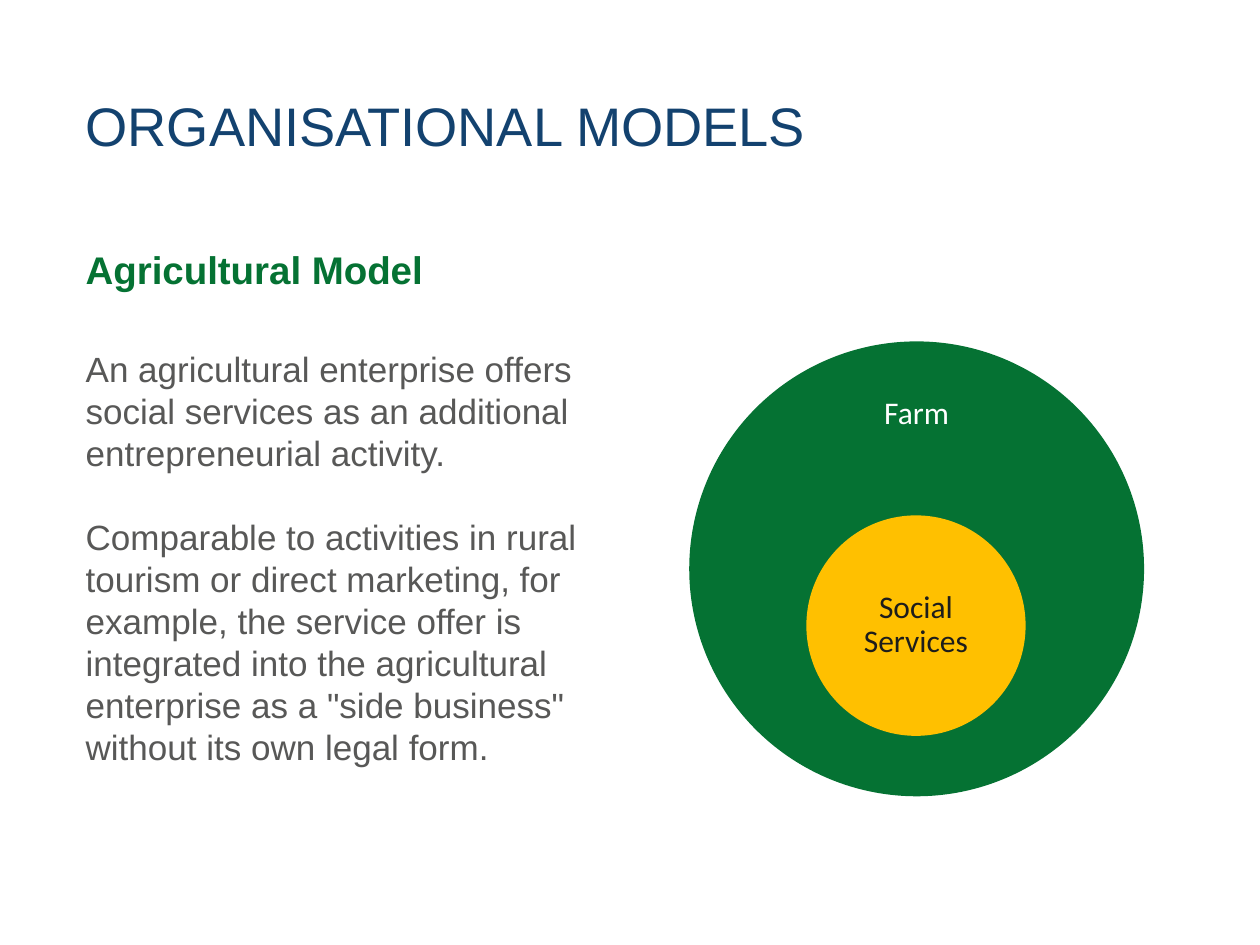
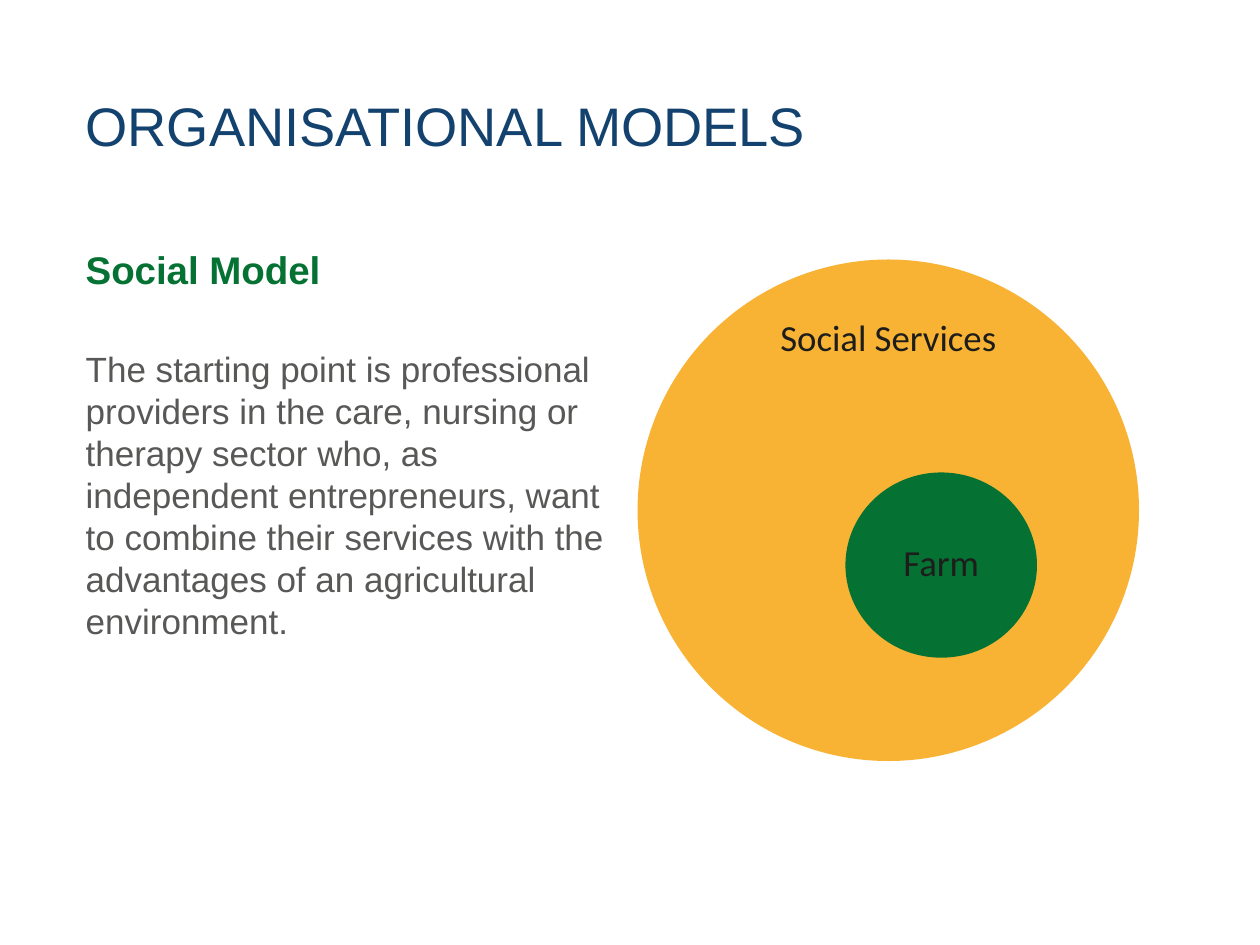
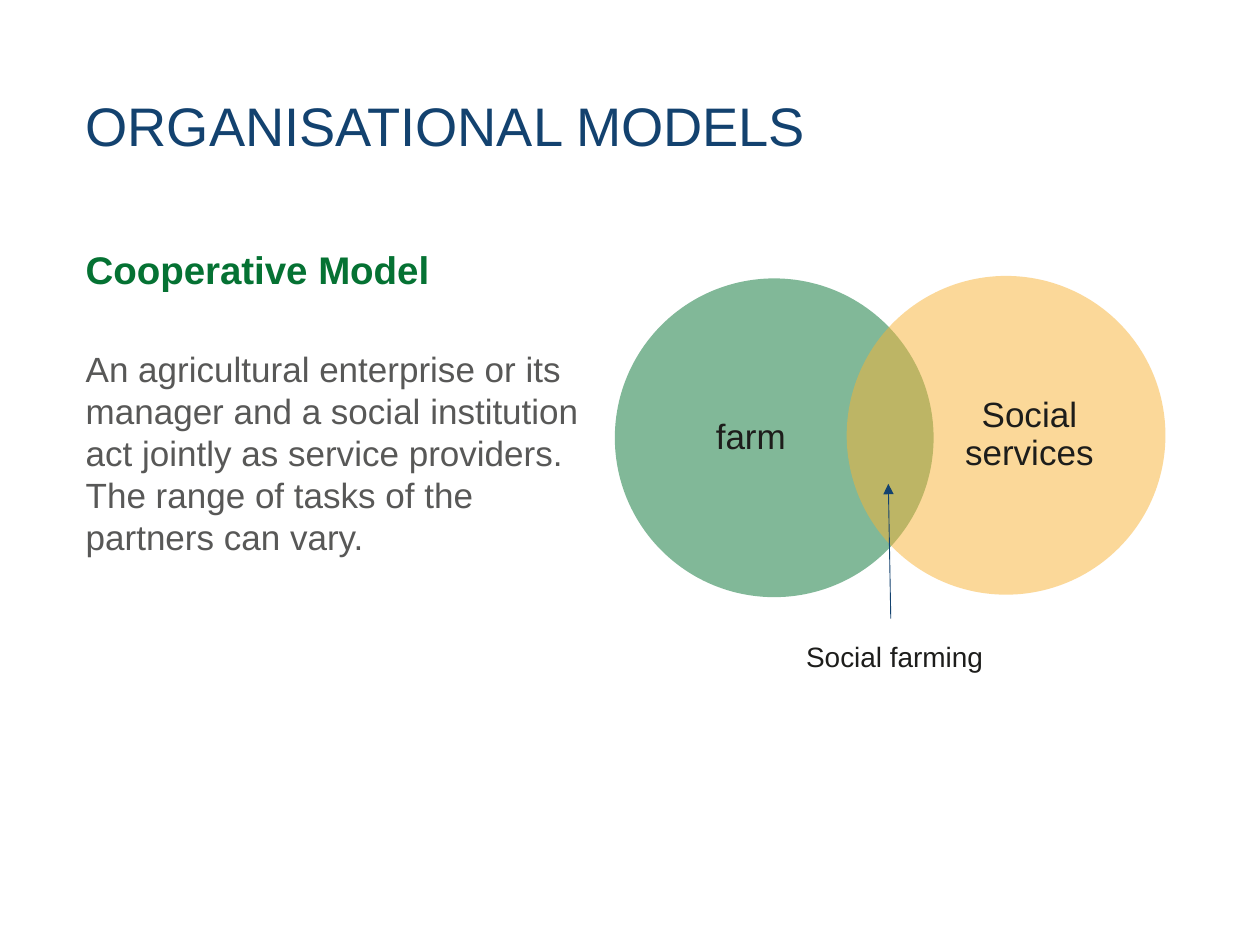
import pptx
import pptx.util
import pptx.dml.color
import pptx.enum.shapes
import pptx.enum.text
import pptx.oxml.ns
import lxml.etree

Inches = pptx.util.Inches
Pt = pptx.util.Pt
ALIGN = pptx.enum.text.PP_ALIGN
ANCHOR = pptx.enum.text.MSO_ANCHOR

COLORS = {
    "title": "13426F",
    "green": "057233",
    "yellow": "FFC000",
    "orange": "F9B334",
    "body": "585857",
    "dark": "1D1D1B",
    "white": "FFFFFF",
}
TITLE = "ORGANISATIONAL MODELS"
TITLE_BOX = (0.68, 0.73, 8.65, 0.71)
TEXT_COLUMN = (0.68, 1.92, 4.25, 4.85)
HEADING_HEIGHT = 0.79
BODY_OFFSET = 0.82


def rgb(name):
    return pptx.dml.color.RGBColor.from_string(COLORS[name])


def add_xml(parent, tag, **attributes):
    return lxml.etree.SubElement(parent, pptx.oxml.ns.qn(tag), attributes)


def format_text(shape, lines, size, color, font="Arial", bold=False, align=ALIGN.LEFT,
                anchor=ANCHOR.TOP, insets=(0.1, 0.05, 0.1, 0.05), spacing=None, gap=0):
    """Write one paragraph per line; insets run left, top, right, bottom."""
    frame = shape.text_frame
    frame.text = "\n".join(lines)
    frame.word_wrap = True
    frame.auto_size = pptx.enum.text.MSO_AUTO_SIZE.NONE
    frame.vertical_anchor = anchor
    (frame.margin_left, frame.margin_top,
     frame.margin_right, frame.margin_bottom) = map(Inches, insets)
    for index, paragraph in enumerate(frame.paragraphs):
        paragraph.alignment = align
        paragraph.line_spacing = spacing
        paragraph.space_before = Pt(gap if index else 0)
        for run in paragraph.runs:
            run.font.name = font
            run.font.size = Pt(size)
            run.font.bold = bold
            run.font.color.rgb = rgb(color)


def add_text(slide, box, lines, size, color, **style):
    shape = slide.shapes.add_textbox(*map(Inches, box))
    format_text(shape, lines, size, color, **style)


def add_circle_label(slide, box, text, size, color, font, inset):
    add_text(slide, box, [text], size, color, font=font, align=ALIGN.CENTER,
             anchor=ANCHOR.MIDDLE, insets=(inset,) * 4, spacing=0.9)


def add_circle(slide, box, color, opacity=None):
    circle = slide.shapes.add_shape(pptx.enum.shapes.MSO_SHAPE.OVAL, *map(Inches, box))
    circle.shadow.inherit = False
    circle.line.fill.background()
    circle.fill.solid()
    circle.fill.fore_color.rgb = rgb(color)
    if opacity is not None:
        fill_color = circle._element.spPr.find(".//" + pptx.oxml.ns.qn("a:srgbClr"))
        add_xml(fill_color, "a:alpha", val=str(opacity * 1000))


def add_arrow(slide, start, end):
    arrow = slide.shapes.add_connector(
        pptx.enum.shapes.MSO_CONNECTOR.STRAIGHT, *map(Inches, start + end))
    arrow.line.color.rgb = rgb("title")
    arrow.line.width = Pt(0.5)
    add_xml(arrow.line._get_or_add_ln(), "a:tailEnd", type="triangle")
    add_xml(arrow._element.spPr, "a:effectLst")


def add_model_slide(presentation, heading, body):
    """Title plus the text column that all models share."""
    slide = presentation.slides.add_slide(presentation.slide_layouts[5])
    title = slide.shapes.title
    title.left, title.top, title.width, title.height = map(Inches, TITLE_BOX)
    format_text(title, [TITLE], 31, "title", insets=(0, 0.05, 0.1, 0.05), spacing=Pt(34))

    left, top, width, height = TEXT_COLUMN
    add_text(slide, (left, top, width, HEADING_HEIGHT), [heading], 22, "green",
             bold=True, insets=(0, 0.05, 0.1, 0.05), spacing=Pt(25))
    add_text(slide, (left, top + BODY_OFFSET, width, height - BODY_OFFSET), body, 20, "body",
             insets=(0, 0.02, 0.1, 0.05), spacing=Pt(24), gap=24)
    return slide


def add_nested_circles(slide, box, outer, inner, inner_box, size, inset):
    """Outer and inner are (text, fill, text colour, label width, label height)."""
    left, top, diameter = box
    text, fill, color, label_width, label_height = outer
    add_circle(slide, (left, top, diameter, diameter), fill)
    add_circle_label(slide, (left + (diameter - label_width) / 2, top + 0.075 * diameter,
                             label_width, label_height), text, size, color, "Calibri", inset)

    offset_x, offset_y, width, height = inner_box
    text, fill, color, label_width, label_height = inner
    inner_left, inner_top = left + offset_x, top + offset_y
    add_circle(slide, (inner_left, inner_top, width, height), fill)
    add_circle_label(slide, (inner_left + (width - label_width) / 2,
                             inner_top + (height - label_height) / 2,
                             label_width, label_height), text, size, color, "Calibri", inset)


def add_overlapping_circles(slide, left, top):
    diameter, label_width, label_height, margin = 2.53, 1.46, 1.93, 0.35
    far_label = diameter - margin - label_width
    circles = [
        ("farm", "green", 0, 0.02, margin),
        ("Social services", "orange", 1.84, 0, far_label),
    ]
    for text, fill, offset_x, offset_y, label_offset in circles:
        x, y = left + offset_x, top + offset_y
        add_circle(slide, (x, y, diameter, diameter), fill, opacity=50)
        add_circle_label(slide, (x + label_offset, y + (diameter - label_height) / 2,
                                 label_width, label_height), text, 20, "dark", "Arial", 0)

    # Pointer to the shared area
    add_arrow(slide, (left + 2.19, top + 2.72), (left + 2.17, top + 1.65))
    add_text(slide, (left + 1.42, top + 2.84, 2.37, 0.37), ["Social farming"], 16, "dark")


def main():
    presentation = pptx.Presentation()
    presentation.slide_width = Inches(10)
    presentation.slide_height = Inches(7.5)

    # Farm that contains social services
    slide = add_model_slide(presentation, "Agricultural Model", [
        "An agricultural enterprise offers social services as an additional "
        "entrepreneurial activity.",
        "Comparable to activities in rural tourism or direct marketing, for example, "
        "the service offer is integrated into the agricultural enterprise as a "
        "\"side business\" without its own legal form.",
    ])
    add_nested_circles(slide, (5.47, 2.71, 3.61),
                       ("Farm", "green", "white", 1.89, 0.61),
                       ("Social Services", "yellow", "dark", 1.23, 0.87),
                       (0.93, 1.38, 1.74, 1.75), size=18, inset=0.14)

    # Social services that contain a farm
    slide = add_model_slide(presentation, "Social Model", [
        "The starting point is professional providers in the care, nursing or therapy "
        "sector who, as independent entrepreneurs, want to combine their services with "
        "the advantages of an agricultural environment.",
    ])
    add_nested_circles(slide, (5.06, 2.06, 3.98),
                       ("Social Services", "orange", "dark", 2.09, 0.68),
                       ("Farm", "green", "dark", 1.08, 0.73),
                       (1.65, 1.69, 1.52, 1.47), size=21, inset=0.16)

    # Both as partners
    slide = add_model_slide(presentation, "Cooperative Model", [
        "An agricultural enterprise or its manager and a social institution act jointly "
        "as service providers. The range of tasks of the partners can vary.",
    ])
    add_overlapping_circles(slide, 4.88, 2.19)

    presentation.save("out.pptx")


if __name__ == "__main__":
    main()
